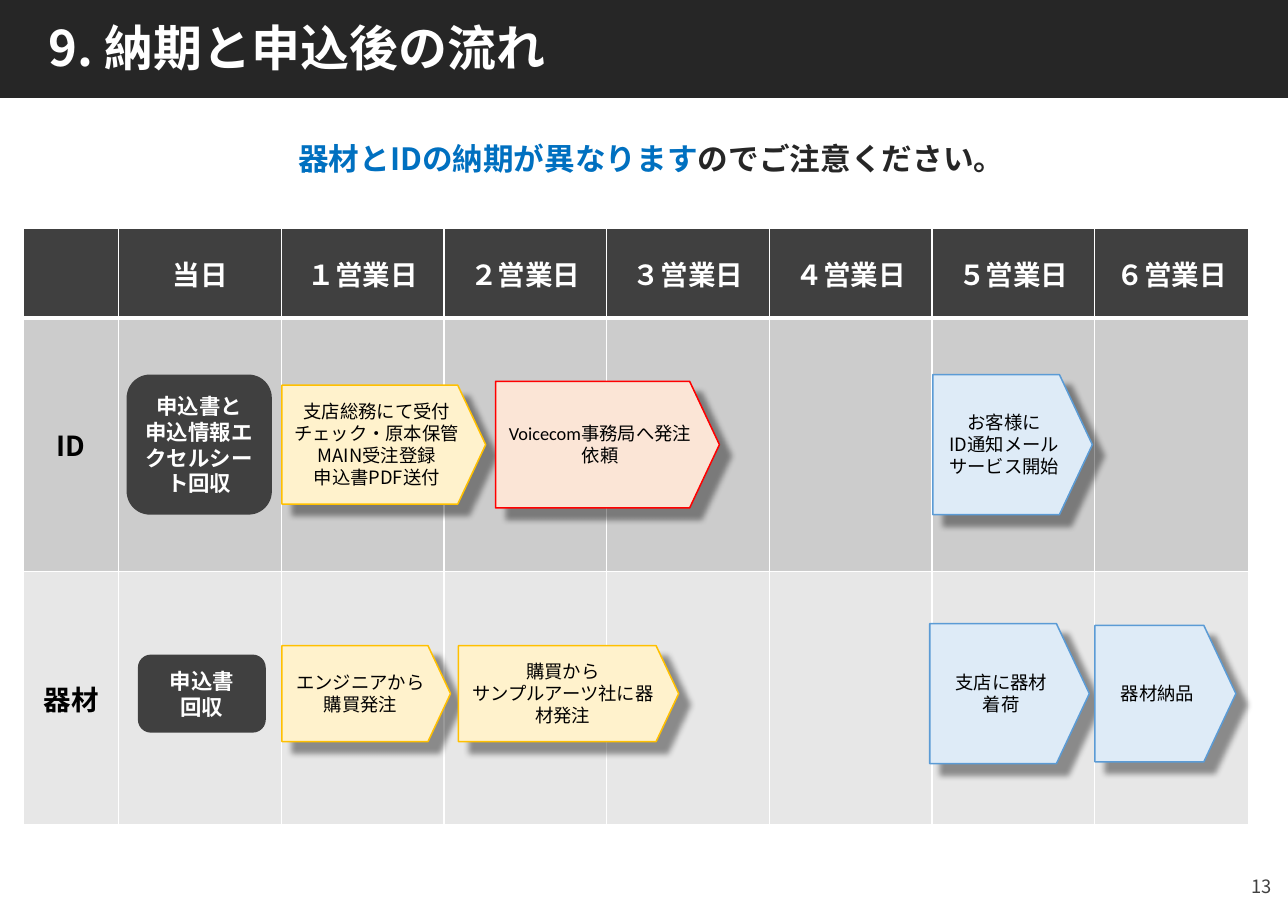
import pptx
import pptx.dml.color
import pptx.enum.shapes
import pptx.enum.text
import pptx.oxml.ns
import pptx.util
from lxml import etree

Cm = pptx.util.Cm
Pt = pptx.util.Pt
RGBColor = pptx.dml.color.RGBColor
SHAPE = pptx.enum.shapes.MSO_SHAPE
ALIGN = pptx.enum.text.PP_ALIGN
ANCHOR = pptx.enum.text.MSO_ANCHOR
FIT = pptx.enum.text.MSO_AUTO_SIZE
qn = pptx.oxml.ns.qn

JAPANESE_FONT = "Noto Sans CJK JP"
BLACK = RGBColor(0, 0, 0)
WHITE = RGBColor(255, 255, 255)
BANNER = RGBColor(0x26, 0x26, 0x26)
CHARCOAL = RGBColor(0x40, 0x40, 0x40)
BLUE = RGBColor(0x00, 0x70, 0xC0)
ID_LANE = RGBColor(0xCC, 0xCC, 0xCC)
EQUIPMENT_LANE = RGBColor(0xE7, 0xE7, 0xE7)
YELLOW = (RGBColor(0xFF, 0xF2, 0xCC), RGBColor(0xFF, 0xC0, 0x00))
RED = (RGBColor(0xFB, 0xE5, 0xD6), RGBColor(0xFF, 0x00, 0x00))
PALE_BLUE = (RGBColor(0xDE, 0xEB, 0xF7), RGBColor(0x5B, 0x9B, 0xD5))

HEADINGS = ["", "当日", "１営業日", "２営業日", "３営業日", "４営業日", "５営業日", "６営業日"]
COLUMN_WIDTHS = [2.2] + [3.75] * 6 + [3.55]
ROW_HEIGHTS = [2.06, 5.84, 5.84]
LANES = [("ID", ID_LANE, 2.92), ("器材", EQUIPMENT_LANE, 2.82)]

RECEIPTS = [
    (0, 2.38, 3.35, 3.23, ["申込書と", "申込情報エクセルシート回収"]),
    (1, 2.64, 2.95, 1.8, ["申込書", "回収"]),
]
STEPS = [
    (0, 5.96, 4.7, 2.74, YELLOW,
     ["支店総務にて受付チェック・原本保管", "MAIN受注登録", "申込書PDF送付"]),
    (0, 10.89, 5.16, 2.92, RED,
     [[("Voicecom事務局", {"name": "Calibri"}), ("へ発注依頼", {})]]),
    (0, 20.97, 3.68, 3.23, PALE_BLUE, ["お客様に", "ID通知メール", "サービス開始"]),
    (1, 5.96, 3.89, 2.21, YELLOW, ["エンジニアから購買発注"]),
    (1, 10.03, 5.08, 2.21, YELLOW, ["購買から", "サンプルアーツ社に器材発注"]),
    (1, 20.9, 3.68, 3.23, PALE_BLUE, ["支店に器材", "着荷"]),
    (1, 24.71, 3.25, 3.15, PALE_BLUE, ["器材納品"]),
]


def write(frame, paragraphs, size, color, bold=False, align=ALIGN.CENTER):
    """Fill a text frame with paragraphs, each a string or a list of runs."""
    frame.word_wrap = True
    for index, content in enumerate(paragraphs):
        paragraph = frame.add_paragraph() if index else frame.paragraphs[0]
        paragraph.alignment = align
        for text, changes in [(content, {})] if isinstance(content, str) else content:
            run = paragraph.add_run()
            run.text = text
            values = {"name": JAPANESE_FONT, "size": Pt(size), "bold": bold, "color": color} | changes
            run.font.color.rgb = values.pop("color")
            for name, value in values.items():
                setattr(run.font, name, value)
            properties = run._r.get_or_add_rPr()
            etree.SubElement(properties, qn("a:ea"), typeface=JAPANESE_FONT)


def add_block(slide, kind, box, fill, line=None):
    """Add a filled preset shape without a theme shadow."""
    shape = slide.shapes.add_shape(kind, *map(Cm, box))
    shape.shadow.inherit = False
    shape.fill.solid()
    shape.fill.fore_color.rgb = fill
    if line is None:
        shape.line.fill.background()
    else:
        shape.line.color.rgb = line
        shape.line.width = Pt(1)
    shape.text_frame.vertical_anchor = ANCHOR.MIDDLE
    return shape


def add_drop_shadow(shape):
    """Cast a soft shadow to the lower right of a shape."""
    effects = shape.element.spPr.find(qn("a:effectLst"))
    shadow = etree.SubElement(effects, qn("a:outerShdw"), blurRad=str(Pt(4)),
                              dist=str(Pt(10)), dir="2700000", algn="tl", rotWithShape="0")
    color = etree.SubElement(shadow, qn("a:srgbClr"), val=str(BLACK))
    etree.SubElement(color, qn("a:alpha"), val="40000")


def add_text(slide, box, content, size, color, bold=False, align=ALIGN.CENTER):
    """Add a one-paragraph text box."""
    textbox = slide.shapes.add_textbox(*map(Cm, box))
    write(textbox.text_frame, [content], size, color, bold, align)


def add_header(slide, box, text):
    """Draw the dark banner and lay the title over it."""
    left, top, width, height = box
    title = slide.shapes.title
    banner = add_block(slide, SHAPE.RECTANGLE, box, BANNER)
    title.element.addprevious(banner.element)
    places = {"left": left + 1, "top": top + 0.4, "width": width - 2.1, "height": height - 0.76}
    for name, value in places.items():
        setattr(title, name, Cm(value))
    frame = title.text_frame
    write(frame, [text], 32, WHITE, True, ALIGN.LEFT)
    frame.vertical_anchor = ANCHOR.BOTTOM
    frame.auto_size = FIT.SHAPE_TO_FIT_TEXT
    frame.paragraphs[0].line_spacing = 0.9


def format_cell(cell, fill, top, bottom):
    """Set the fill, anchor and white borders of a cell."""
    cell.fill.solid()
    cell.fill.fore_color.rgb = fill
    cell.vertical_anchor = ANCHOR.MIDDLE
    widths = {"a:lnL": 1, "a:lnR": 1, "a:lnT": top, "a:lnB": bottom}
    for index, (tag, width) in enumerate(widths.items()):
        border = etree.Element(qn(tag), w=str(Pt(width)))
        solid = etree.SubElement(border, qn("a:solidFill"))
        etree.SubElement(solid, qn("a:srgbClr"), val=str(WHITE))
        cell._tc.get_or_add_tcPr().insert(index, border)


def add_schedule(slide, box):
    """Add the table of working days with one lane per delivery."""
    rows = [(HEADINGS, CHARCOAL, WHITE, 1, 3)]
    for index, (label, fill, middle) in enumerate(LANES):
        labels = [label] + [""] * (len(HEADINGS) - 1)
        rows.append((labels, fill, BLACK, 1 if index else 3, 1))
    table = slide.shapes.add_table(len(rows), len(HEADINGS), *map(Cm, box)).table
    for column, width in zip(table.columns, COLUMN_WIDTHS):
        column.width = Cm(width)
    for row, height, (labels, fill, color, top, bottom) in zip(table.rows, ROW_HEIGHTS, rows):
        row.height = Cm(height)
        for cell, label in zip(row.cells, labels):
            format_cell(cell, fill, top, bottom)
            if label:
                write(cell.text_frame, [label], 18, color, True)


def add_flow(slide, box):
    """Centre the receipts and arrow steps on the lanes of the schedule."""
    left, top = box[:2]
    centers = [top + sum(ROW_HEIGHTS[:index + 1]) + lane[2] for index, lane in enumerate(LANES)]
    for lane, offset, width, height, lines in RECEIPTS:
        place = (left + offset, centers[lane] - height / 2, width, height)
        receipt = add_block(slide, SHAPE.ROUNDED_RECTANGLE, place, CHARCOAL)
        write(receipt.text_frame, lines, 14, WHITE, True)
    for lane, offset, width, height, (fill, line), lines in STEPS:
        place = (left + offset, centers[lane] - height / 2, width, height)
        step = add_block(slide, SHAPE.PENTAGON, place, fill, line)
        step.adjustments[0] = 0.235
        add_drop_shadow(step)
        write(step.text_frame, lines, 12, BLACK)


def main():
    """Build the delivery schedule slide."""
    presentation = pptx.Presentation()
    presentation.slide_width = Cm(29.7)
    presentation.slide_height = Cm(21)
    slide = presentation.slides.add_slide(presentation.slide_layouts[5])
    add_header(slide, (-0.13, 0, 30, 2.26), "9. 納期と申込後の流れ")
    add_text(slide, (22.87, 20.04, 6.7, 1.12), "13", 12, CHARCOAL, align=ALIGN.RIGHT)
    notice = [("器材とIDの納期が異なります", {"color": BLUE}), ("のでご注意ください。", {})]
    add_text(slide, (-0.48, 3.1, 31, 1.12), notice, 20, BANNER, True)
    schedule = (0.54, 5.27, sum(COLUMN_WIDTHS), sum(ROW_HEIGHTS))
    add_schedule(slide, schedule)
    add_flow(slide, schedule)
    presentation.save("out.pptx")


if __name__ == "__main__":
    main()
